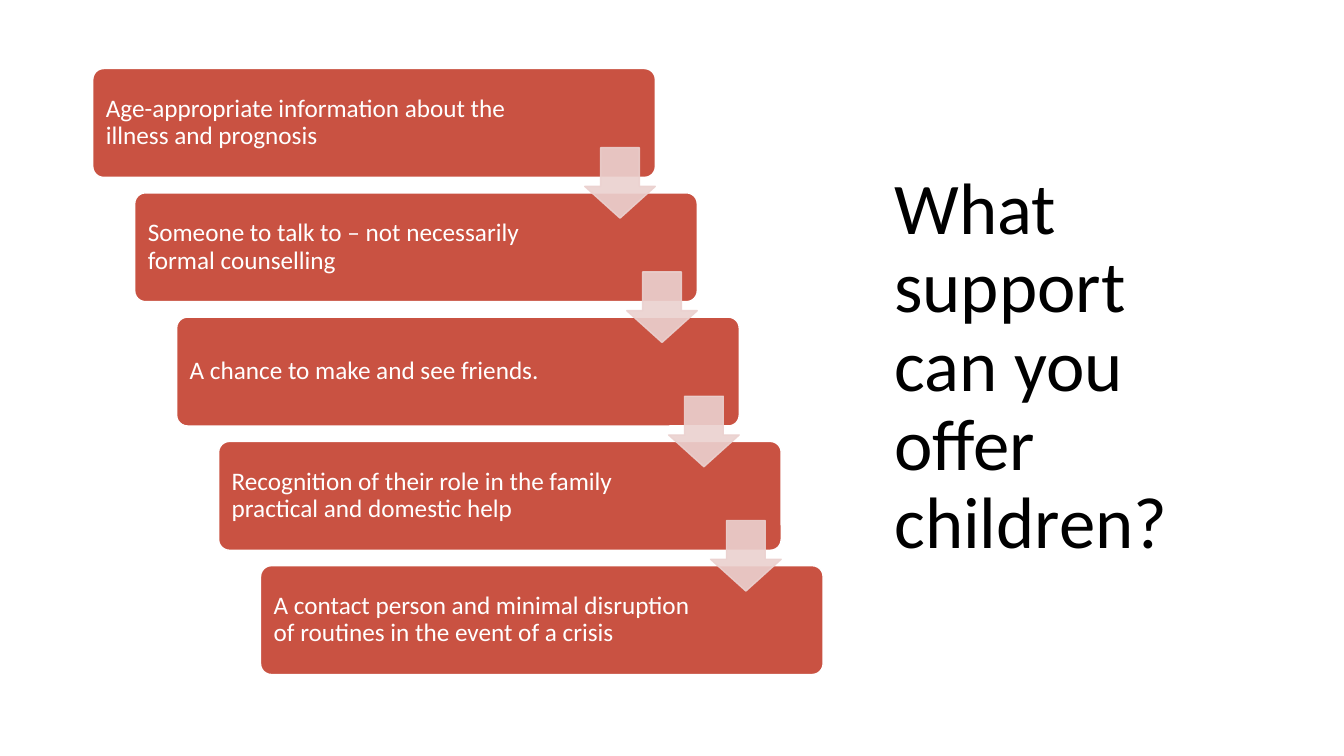
from lxml.etree import SubElement
from pptx import Presentation
from pptx.dml.color import RGBColor
from pptx.enum.shapes import MSO_SHAPE
from pptx.enum.text import MSO_ANCHOR, PP_ALIGN
from pptx.oxml.ns import qn
from pptx.util import Inches, Pt

TITLE = "What support can you offer children?"
STEPS = [
    "Age-appropriate information about the illness and prognosis",
    "Someone to talk to – not necessarily formal counselling",
    "A chance to make and see friends.",
    "Recognition of their role in the family practical and domestic help",
    "A contact person and minimal disruption of routines in the event of a crisis",
]

RED = RGBColor(0xC9, 0x52, 0x42)
PINK = RGBColor(0xEB, 0xD1, 0xCF)
WHITE = RGBColor(0xFF, 0xFF, 0xFF)
BLACK = RGBColor(0, 0, 0)
FONT = "Calibri"

LEFT, TOP = 0.92, 0.68
STEP_X, STEP_Y = 0.416, 1.233
BOX_W, BOX_H = 5.58, 1.08
ARROW = 0.7
ARROW_X, ARROW_Y = BOX_W - ARROW, 0.785  # offset from the box above


def write(frame, text, size, color):
    frame.word_wrap = True
    frame.vertical_anchor = MSO_ANCHOR.MIDDLE
    para = frame.paragraphs[0]
    para.text = text
    para.alignment = PP_ALIGN.LEFT
    para.line_spacing = 0.9
    para.font.name = FONT
    para.font.size = Pt(size)
    para.font.color.rgb = color


def add_shape(slide, kind, x, y, w, h, fill, line):
    shape = slide.shapes.add_shape(kind, Inches(x), Inches(y), Inches(w), Inches(h))
    shape.shadow.inherit = False
    shape.fill.solid()
    shape.fill.fore_color.rgb = fill
    shape.line.color.rgb = line
    shape.line.width = Pt(1)
    return shape


def add_box(slide, x, y, text):
    box = add_shape(slide, MSO_SHAPE.ROUNDED_RECTANGLE, x, y, BOX_W, BOX_H, RED, WHITE)
    box.adjustments[0] = 0.1
    frame = box.text_frame
    frame.margin_left = Inches(0.1)
    frame.margin_right = Inches(1.22)
    frame.margin_top = frame.margin_bottom = Inches(0.1)
    write(frame, text, 18, WHITE)


def add_arrow(slide, x, y):
    arrow = add_shape(slide, MSO_SHAPE.DOWN_ARROW, x, y, ARROW, ARROW, PINK, PINK)
    arrow.adjustments[0] = 0.55
    arrow.adjustments[1] = 0.45
    for color in arrow.element.spPr.iter(qn("a:srgbClr")):
        SubElement(color, qn("a:alpha"), val="90000")


def main():
    prs = Presentation()
    prs.slide_width, prs.slide_height = Inches(13.33), Inches(7.5)
    slide = prs.slides.add_slide(prs.slide_layouts[5])

    title = slide.shapes.title
    title.left, title.top = Inches(8.77), Inches(0.6)
    title.width, title.height = Inches(3.65), Inches(6.1)
    write(title.text_frame, TITLE, 52, BLACK)

    spots = [(LEFT + i * STEP_X, TOP + i * STEP_Y) for i in range(len(STEPS))]
    for (x, y), text in zip(spots, STEPS):
        add_box(slide, x, y, text)
    for x, y in spots[:-1]:
        add_arrow(slide, x + ARROW_X, y + ARROW_Y)

    prs.save("out.pptx")


if __name__ == "__main__":
    main()
